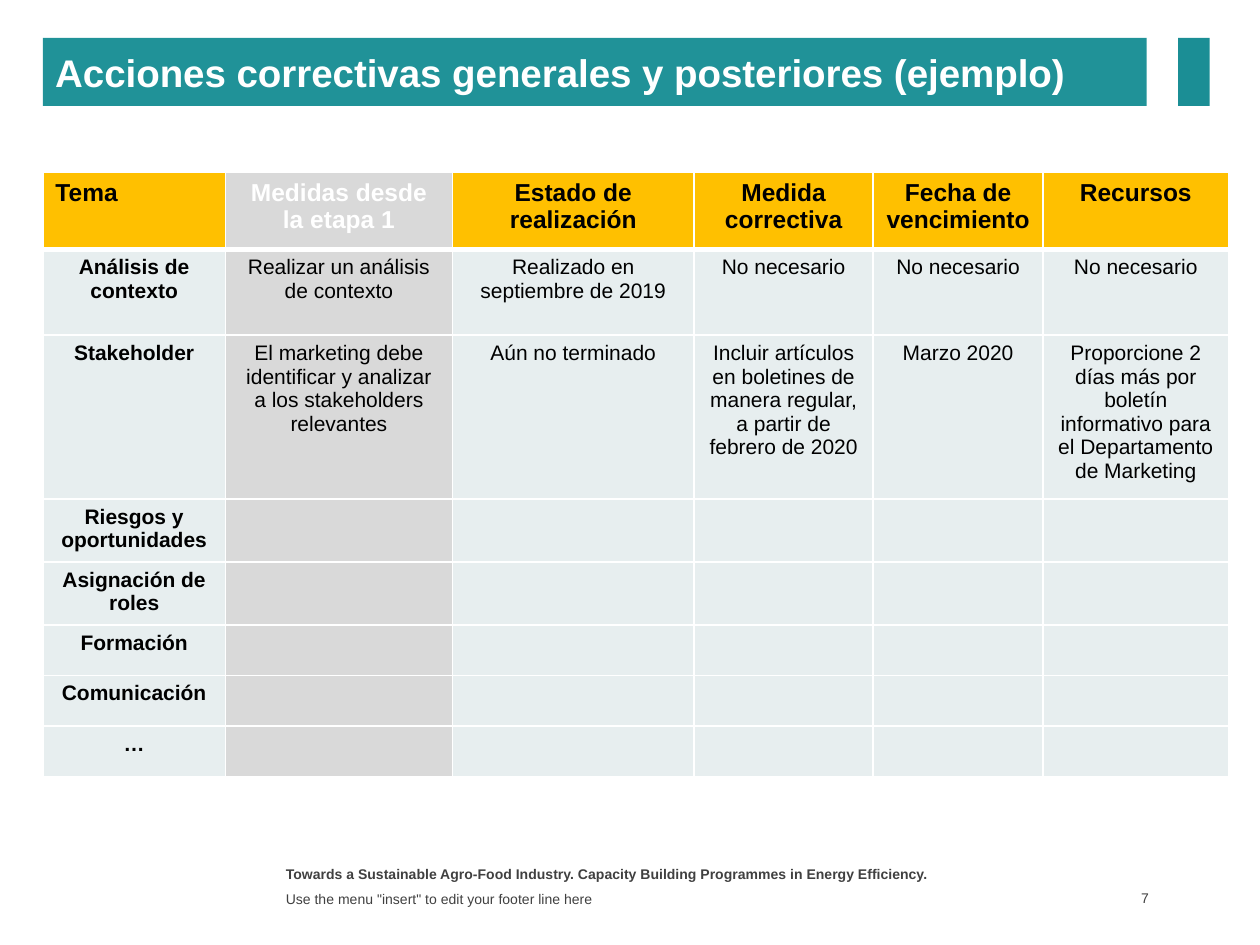
from lxml import etree
from pptx import Presentation
from pptx.dml.color import RGBColor
from pptx.enum.shapes import MSO_SHAPE as Shape
from pptx.enum.text import MSO_ANCHOR as Anchor, PP_ALIGN as Align
from pptx.oxml.ns import qn
from pptx.util import Inches, Pt

COLORS = {
    "title": "209298", "accent": "1B8E95", "header": "FFC000", "measure": "D9D9D9",
    "body": "E7EEEF", "white": "FFFFFF", "black": "000000", "footer": "404040",
}
LEFT = 0.34
BAR_TOP, BAR_HEIGHT = 0.3, 0.54
FOOTER_LEFT, FOOTER_WIDTH = 2.17, 5.5
MEASURE_COLUMN = 1
COLUMNS = [1.45, 1.8, 1.92, 1.42, 1.35, 1.47]
ROWS = [0.61, 0.68, 1.3, 0.5, 0.5, 0.4, 0.4, 0.4]
CONTENT = [
    ["Tema", "Medidas desde la etapa 1", "Estado de realización",
     "Medida correctiva", "Fecha de vencimiento", "Recursos"],
    ["Análisis de contexto", "Realizar un análisis de contexto",
     "Realizado en septiembre de 2019"] + ["No necesario"] * 3,
    ["Stakeholder",
     "El marketing debe identificar y analizar a los stakeholders relevantes",
     "Aún no terminado",
     "Incluir artículos en boletines de manera regular, a partir de febrero de 2020",
     "Marzo 2020",
     "Proporcione 2 días más por boletín informativo para el Departamento de Marketing"],
    ["Riesgos y oportunidades"],
    ["Asignación de roles"],
    ["Formación"],
    ["Comunicación"],
    ["…"],
]


def write(frame, text, size=8, color="footer", bold=False, align=Align.LEFT):
    frame.word_wrap = True
    paragraph = frame.paragraphs[0]
    paragraph.alignment = align
    paragraph.font.size = Pt(size)
    if text:
        run = paragraph.add_run()
        run.text = text
        run.font.name = "Arial"
        run.font.size = Pt(size)
        run.font.bold = bold
        run.font.color.rgb = RGBColor.from_string(COLORS[color])


def fill_cell(cell, color, top, bottom):
    """Give a cell white borders (top and bottom widths in points) and a fill."""
    properties = cell._tc.get_or_add_tcPr()
    for side, width in (("L", 1), ("R", 1), ("T", top), ("B", bottom)):
        line = etree.SubElement(properties, qn(f"a:ln{side}"), w=str(Pt(width)))
        solid = etree.SubElement(line, qn("a:solidFill"))
        etree.SubElement(solid, qn("a:srgbClr"), val=COLORS["white"])
    cell.fill.solid()
    cell.fill.fore_color.rgb = RGBColor.from_string(COLORS[color])


presentation = Presentation()
presentation.slide_width, presentation.slide_height = Inches(10), Inches(7.5)
slide = presentation.slides.add_slide(presentation.slide_layouts[6])

# Footer
project = "Towards a Sustainable Agro-Food Industry. Capacity Building Programmes in Energy Efficiency."
hint = 'Use the menu "insert" to edit your footer line here'
for text, left, top, width, height, anchor, bold, align in (
    (project, FOOTER_LEFT, 6.82, FOOTER_WIDTH, 0.21, Anchor.TOP, True, Align.LEFT),
    (hint, FOOTER_LEFT, 7.04, FOOTER_WIDTH, 0.19, Anchor.MIDDLE, False, Align.LEFT),
    ("7", 8.6, 7.03, 0.56, 0.2, Anchor.MIDDLE, False, Align.RIGHT),
):
    box = slide.shapes.add_textbox(Inches(left), Inches(top), Inches(width), Inches(height))
    write(box.text_frame, text, bold=bold, align=align)
    box.text_frame.vertical_anchor = anchor
    if align == Align.RIGHT:
        box.text_frame.margin_right = Inches(0.04)

# Table of corrective actions
table = slide.shapes.add_table(
    len(ROWS), len(COLUMNS), Inches(LEFT), Inches(1.37),
    Inches(sum(COLUMNS)), Inches(sum(ROWS))).table
for column, width in zip(table.columns, COLUMNS):
    column.width = Inches(width)
for row, height in zip(table.rows, ROWS):
    row.height = Inches(height)
for r, texts in enumerate(CONTENT):
    for c in range(len(COLUMNS)):
        cell = table.cell(r, c)
        is_header, is_measure = r == 0, c == MEASURE_COLUMN
        fill = "measure" if is_measure else "header" if is_header else "body"
        fill_cell(cell, fill, top=3 if r == 1 else 1, bottom=3 if is_header else 1)
        write(cell.text_frame, texts[c] if c < len(texts) else "",
              size=14 if is_header else 12,
              color="white" if is_header and is_measure else "black",
              bold=is_header or c == 0,
              align=Align.LEFT if r == c == 0 else Align.CENTER)

# Title bar and accent block
for left, width, color, text in (
    (LEFT, 8.76, "title", "Acciones correctivas generales y posteriores (ejemplo)"),
    (9.35, 0.25, "accent", ""),
):
    bar = slide.shapes.add_shape(
        Shape.RECTANGLE, Inches(left), Inches(BAR_TOP), Inches(width), Inches(BAR_HEIGHT))
    bar.shadow.inherit = False
    bar.fill.solid()
    bar.fill.fore_color.rgb = RGBColor.from_string(COLORS[color])
    bar.line.fill.background()
    bar.text_frame.vertical_anchor = Anchor.MIDDLE
    write(bar.text_frame, text, size=22, color="white", bold=True)

presentation.save("out.pptx")
